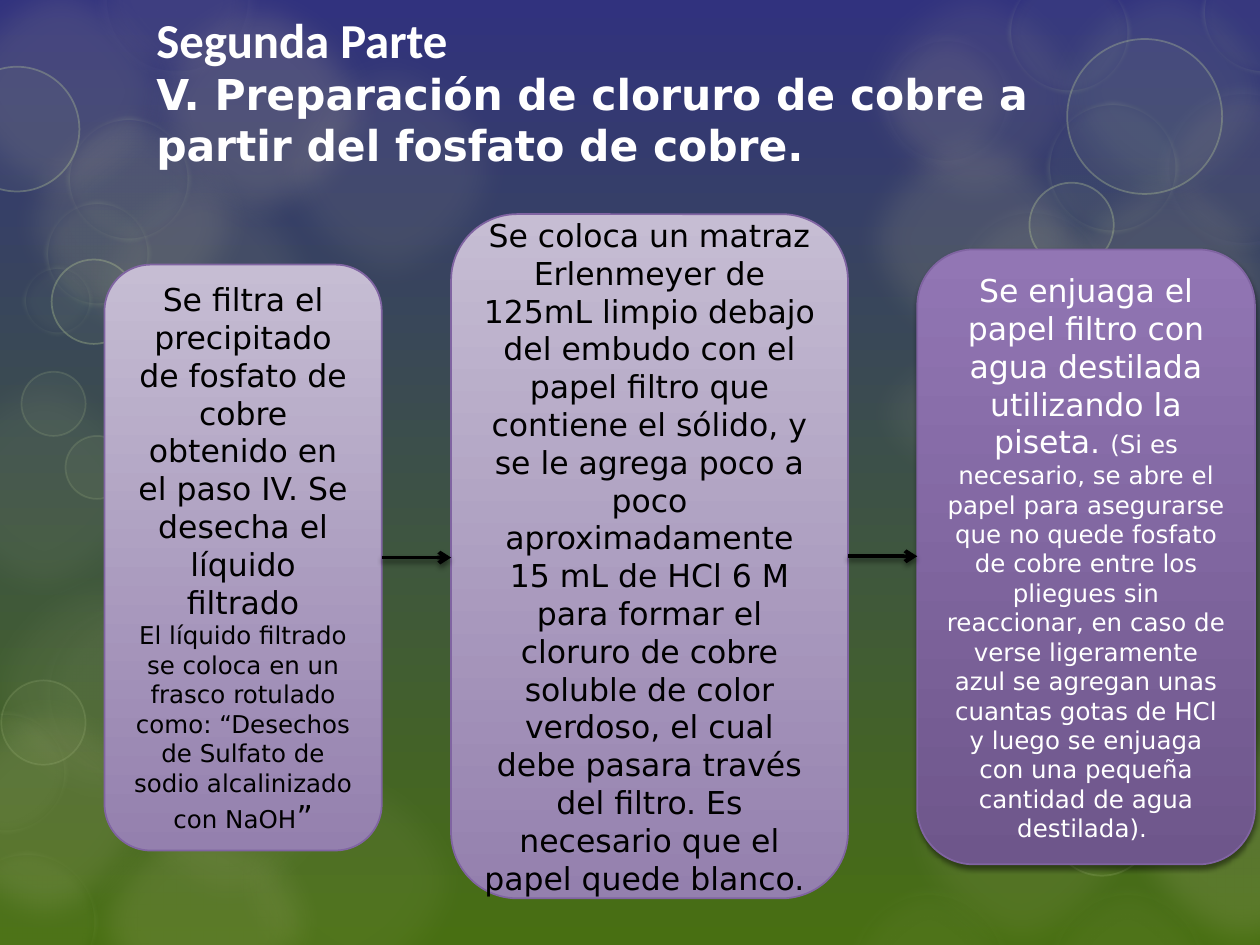
from lxml import etree
from pptx import Presentation
from pptx.dml.color import RGBColor
from pptx.enum.shapes import MSO_CONNECTOR, MSO_SHAPE
from pptx.enum.text import MSO_ANCHOR, MSO_AUTO_SIZE, PP_ALIGN
from pptx.oxml.ns import qn
from pptx.util import Cm, Pt

ELLIPSE, ROUNDED = MSO_SHAPE.OVAL, MSO_SHAPE.ROUNDED_RECTANGLE
STRAIGHT = MSO_CONNECTOR.STRAIGHT
MIDDLE = MSO_ANCHOR.MIDDLE
NO_FIT = MSO_AUTO_SIZE.NONE
LEFT, CENTER = PP_ALIGN.LEFT, PP_ALIGN.CENTER

UNIT = 2.54
FIRST_BUBBLE_ID = 100
BODY_FONT = "DejaVu Sans"
SAND, LIME, IVORY = "C4BD97", "C3D69B", "F5F4ED"
PALE, DEEP = ("C6BDD3", "9480AE"), ("9276B4", "6E568B")

GLOWS = [
    (SAND, 8, None, 0.25, [(-0.26, 4.42, 2.09), (0.77, 5.24, 2.09), (1.73, 5.96, 2.09),
                           (-0.7, 2.82, 2.09)]),
    (SAND, 10, None, 0.25, [(0.57, 1.2, 2.09), (2.05, 0.31, 2.09), (6.69, -0.29, 2.09),
                            (7.06, 5.62, 2.09), (6.75, 2.62, 1.33)]),
    (SAND, 16, None, 0.25, [(0.57, 6.27, 2.09), (8.81, 5.62, 2.09), (-0.69, 5.41, 2.09)]),
    (SAND, 14, None, 0.25, [(-0.56, -0.32, 2.09)]),
    (SAND, 20, None, 0.25, [(1.01, -0.18, 2.09)]),
    (SAND, 15, None, 0.25, [(0, 0.72, 2.09), (8.2, 1.2, 2.09), (6.69, 0.86, 2.09)]),
    (LIME, 10, None, 0.25, [(8.2, -0.32, 2.09)]),
    (SAND, 10, (IVORY, 14, 6), 0.18, [(9.18, 0.65, 1.37), (6.94, 0.23, 1.14), (7.52, 1.59, 1.33),
                                      (7.89, 2.24, 1.14), (8.47, 2.91, 0.79), (0.75, -0.65, 1.31)]),
    (SAND, 6, (IVORY, 14, 4), 0.18, [(0.3, 4.73, 1.53), (6.69, 7.01, 1.37), (8.28, 7.01, 1.34)]),
]
RINGS = [
    (LIME, 5, (LIME, 1, 15), 0, [(0.01, 5.4, 0.67), (8.34, 6.14, 0.81), (8.2, 5.39, 0.81),
                                 (0.17, 2.95, 0.51), (0.52, 3.46, 0.5)]),
    (LIME, 5, (LIME, 1, 30), 0, [(-0.36, 0.53, 0.99), (0.41, 2.06, 0.67), (8.47, 0.31, 1.23),
                                 (8.17, 1.45, 0.67)]),
    (LIME, 5, (LIME, 5, 15), 0.07, [(-0.35, 6.75, 1.13), (-0.44, 5.64, 0.98)]),
    (LIME, 5, (LIME, 5, 30), 0.07, [(0.52, 0.92, 1), (0.35, 1.59, 0.85), (0.17, 2.1, 0.57),
                                    (7.99, -0.24, 0.99), (9.53, -0.4, 1), (8.3, 0.8, 1.06)]),
]

TITLE = [("Segunda Parte", 27.9, "Calibri"),
         ("V. Preparación de cloruro de cobre a partir del fosfato de cobre.", 24.3, BODY_FONT)]
STEPS = [
    ((0.83, 2.1, 2.2, 4.65), PALE, "000000", False, [
        [("Se filtra el precipitado de fosfato de cobre obtenido en el paso IV. "
          "Se desecha el líquido filtrado", 18)],
        [("El líquido filtrado se coloca en un frasco rotulado como: “Desechos de Sulfato "
          "de sodio alcalinizado con NaOH", 14), ("”", 18)]]),
    ((3.58, 1.7, 3.15, 5.43), PALE, "000000", False, [
        [("Se coloca un matraz Erlenmeyer de 125mL limpio debajo del embudo con el papel filtro "
          "que contiene el sólido, y se le agrega poco a poco aproximadamente 15 mL de HCl 6 M "
          "para formar el cloruro de cobre soluble de color verdoso, el cual debe pasara través "
          "del filtro. Es necesario que el papel quede blanco. ", 18)]]),
    ((7.28, 1.98, 2.68, 4.88), DEEP, "FFFFFF", True, [
        [("Se enjuaga el papel filtro con agua destilada utilizando la piseta. ", 18),
         ("(Si es necesario, se abre el papel para asegurarse que no quede fosfato de cobre "
          "entre los pliegues sin reaccionar, en caso de verse ligeramente azul se agregan unas "
          "cuantas gotas de HCl y luego se enjuaga con una pequeña cantidad de agua "
          "destilada). ", 14)]]),
]


def rgb(value):
    return RGBColor.from_string(value)


def length(value):
    return Cm(value * UNIT)


def set_format(target, formats):
    for attribute, value in formats.items():
        setattr(target, attribute, value)


def paint_solid(fill, color, alpha=100):
    fill.solid()
    fill.fore_color.rgb = rgb(color)
    tint = fill._xPr.find(".//" + qn("a:srgbClr"))
    if alpha < 100:
        etree.SubElement(tint, qn("a:alpha"), val=str(alpha * 1000))


def paint_gradient(fill, colors):
    fill.gradient()
    fill.gradient_angle = 270
    for stop, color in zip(fill.gradient_stops, colors):
        stop.color.rgb = rgb(color)


def add_shadow(effects):
    shadow = etree.SubElement(effects, qn("a:outerShdw"), blurRad=str(Pt(3)), dist=str(Pt(2)),
                              dir="5400000", rotWithShape="0")
    tint = etree.SubElement(shadow, qn("a:srgbClr"), val="000000")
    etree.SubElement(tint, qn("a:alpha"), val="45000")


def write_run(paragraph, text, size, font, color, bold=False):
    run = paragraph.add_run()
    run.text = text
    set_format(run.font, {"size": Pt(size), "name": font, "bold": bold})
    run.font.color.rgb = rgb(color)


def draw_bubble(slide, circle, color, alpha, border, softness):
    left, top, diameter = circle
    bubble = slide.shapes.add_shape(ELLIPSE, *map(length, (left, top, diameter, diameter)))
    bubble.shadow.inherit = False
    paint_solid(bubble.fill, color, alpha)
    if border:
        border_color, width, border_alpha = border
        paint_solid(bubble.line.fill, border_color, border_alpha)
        bubble.line.width = Pt(width)
    else:
        bubble.line.fill.background()
    if softness:
        effects = bubble.element.spPr.find(qn("a:effectLst"))
        etree.SubElement(effects, qn("a:softEdge"), rad=str(length(softness)))
    return bubble.element


def fill_backdrop(slide, families):
    master_tree = slide.slide_layout.slide_master.shapes._spTree
    bubbles = [draw_bubble(slide, circle, *style)
               for *style, circles in families for circle in circles]
    for number, bubble in enumerate(bubbles, FIRST_BUBBLE_ID):
        bubble.nvSpPr.cNvPr.set("id", str(number))
        master_tree.append(bubble)


def place_title(slide, box):
    title = slide.shapes.title
    set_format(title, dict(zip(("left", "top", "width", "height"), map(length, box))))
    set_format(title.text_frame, {"auto_size": NO_FIT, "vertical_anchor": MIDDLE,
                                  "word_wrap": True})
    heading = title.text_frame.paragraphs[0]
    heading.alignment = LEFT
    for index, (text, size, font) in enumerate(TITLE):
        if index:
            heading.add_line_break()
        write_run(heading, text, size, font, "FFFFFF", True)


def draw_step(slide, box, colors, text_color, shadowed, paragraphs):
    step = slide.shapes.add_shape(ROUNDED, *map(length, box))
    step.shadow.inherit = False
    paint_gradient(step.fill, colors)
    paint_solid(step.line.fill, "8064A2")
    step.line.width = Pt(1)
    if shadowed:
        add_shadow(step.element.spPr.find(qn("a:effectLst")))
    frame = step.text_frame
    set_format(frame, {"word_wrap": True, "vertical_anchor": MIDDLE})
    for index, pieces in enumerate(paragraphs):
        paragraph = frame.add_paragraph() if index else frame.paragraphs[0]
        paragraph.alignment = CENTER
        for text, size in pieces:
            write_run(paragraph, text, size, BODY_FONT, text_color)


def draw_arrow(slide, source, target):
    left, top, width, height = source
    middle = top + height / 2
    arrow = slide.shapes.add_connector(
        STRAIGHT, *map(length, (left + width, middle, target[0], middle)))
    paint_solid(arrow.line.fill, "000000")
    arrow.line.width = Pt(2.25)
    properties = arrow.element.spPr
    etree.SubElement(properties.find(qn("a:ln")), qn("a:tailEnd"), type="arrow")
    add_shadow(etree.SubElement(properties, qn("a:effectLst")))


def main():
    deck = Presentation()
    set_format(deck, {"slide_width": length(10), "slide_height": length(7.5)})
    slide = deck.slides.add_slide(deck.slide_layouts[5])
    paint_gradient(slide.background.fill, ("31327E", "486F12"))
    fill_backdrop(slide, GLOWS + RINGS)
    place_title(slide, (1.14, 0.21, 7.79, 1.01))
    for step in STEPS:
        draw_step(slide, *step)
    for source, target in zip(STEPS, STEPS[1:]):
        draw_arrow(slide, source[0], target[0])
    deck.save("out.pptx")


if __name__ == "__main__":
    main()
